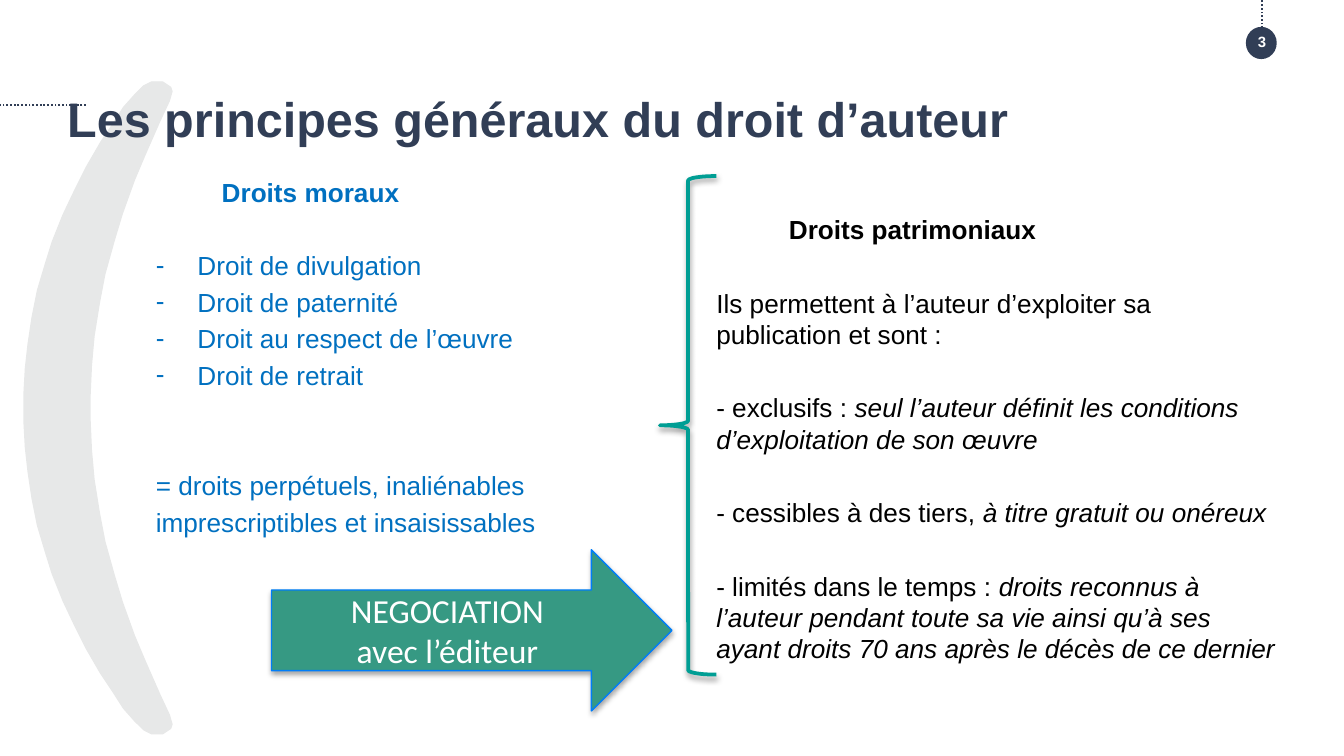
from dataclasses import dataclass

from lxml.etree import SubElement
from pptx import Presentation
from pptx.dml.color import RGBColor
from pptx.enum.dml import MSO_LINE
from pptx.enum.shapes import MSO_CONNECTOR, MSO_SHAPE
from pptx.enum.text import MSO_ANCHOR, PP_ALIGN
from pptx.oxml.ns import qn
from pptx.util import Inches, Pt

COLORS = {
    "navy": "313E56", "gray": "E7E8E8", "blue": "0070C0", "black": "000000",
    "white": "FFFFFF", "green": "369983", "edge": "007DF9", "teal": "009E94",
}
GAP = 2.8  # space before each paragraph, points
ROW = 19.7  # height of one empty row, points


@dataclass
class Span:
    text: str
    bold: bool = False
    italic: bool = False


@dataclass
class Para:
    spans: list[Span]
    rows_before: int = 0
    indent: float = 0
    dash: bool = False


def color(name: str) -> RGBColor:
    return RGBColor.from_string(COLORS[name])


def add_span(para, span: Span, size: float, ink: str, face: str = "Arial") -> None:
    run = para.add_run()
    run.text = span.text
    font = run.font
    font.name, font.size = face, Pt(size)
    font.bold, font.italic = span.bold, span.italic
    font.color.rgb = color(ink)


def add_box(page, left: float, top: float, width: float, height: float,
            anchor=MSO_ANCHOR.TOP):
    box = page.shapes.add_textbox(Inches(left), Inches(top), Inches(width), Inches(height))
    frame = box.text_frame
    frame.word_wrap = True
    frame.vertical_anchor = anchor
    frame.margin_left = frame.margin_right = frame.margin_top = frame.margin_bottom = 0
    return frame


def add_column(page, left: float, top: float, width: float, height: float,
               ink: str, items: list[Para]) -> None:
    frame = add_box(page, left, top, width, height)
    for index, item in enumerate(items):
        para = frame.paragraphs[0] if index == 0 else frame.add_paragraph()
        if index:
            para.space_before = Pt(GAP + item.rows_before * ROW)
        properties = para._p.get_or_add_pPr()
        properties.set("marL", str(Inches(item.indent)))
        if item.dash:
            properties.set("indent", str(-Inches(item.indent)))
            SubElement(properties, qn("a:buFont"), typeface="Arial")
            SubElement(properties, qn("a:buChar"), char="-")
        for span in item.spans:
            add_span(para, span, 14, ink)


def add_dotted_line(page, x1: float, y1: float, x2: float, y2: float) -> None:
    line = page.shapes.add_connector(
        MSO_CONNECTOR.STRAIGHT, Inches(x1), Inches(y1), Inches(x2), Inches(y2))
    line.line.color.rgb = color("navy")
    line.line.width = Pt(1)
    line.line.dash_style = MSO_LINE.ROUND_DOT
    SubElement(line._element.spPr, qn("a:effectLst"))


def add_shadow(shape, opacity: int, distance: float) -> None:
    shape.shadow.inherit = False
    effects = shape._element.spPr.find(qn("a:effectLst"))
    shadow = SubElement(effects, qn("a:outerShdw"), blurRad=str(Pt(3.1)),
                        dist=str(Pt(distance)), dir="5400000", rotWithShape="0")
    ink = SubElement(shadow, qn("a:srgbClr"), val=COLORS["black"])
    SubElement(ink, qn("a:alpha"), val=str(opacity * 1000))


def add_bracket(page) -> None:
    """Large parenthesis: the upper half, mirrored about its middle."""
    upper = [
        (0.67, 2.95), (0.68, 2.72), (0.7, 2.5), (0.74, 2.25), (0.78, 2.04),
        (0.85, 1.79), (0.91, 1.59), (1, 1.34), (1.08, 1.15), (1.19, 0.9),
        (1.26, 0.75), (1.28, 0.68), (1.27, 0.65), (1.21, 0.61), (1.13, 0.61),
        (1.07, 0.64), (1, 0.71), (0.92, 0.8), (0.85, 0.91), (0.75, 1.06),
        (0.64, 1.25), (0.56, 1.41), (0.47, 1.6), (0.39, 1.8), (0.34, 1.96),
        (0.28, 2.16), (0.24, 2.36), (0.21, 2.56), (0.19, 2.74), (0.18, 2.92),
    ]
    lower = [(x, 6.07 - y) for x, y in reversed(upper)]
    start, *rest = [(Inches(x), Inches(y)) for x, y in upper + lower]
    builder = page.shapes.build_freeform(*start)
    builder.add_line_segments(rest, close=True)
    bracket = builder.convert_to_shape()
    bracket.shadow.inherit = False
    bracket.fill.solid()
    bracket.fill.fore_color.rgb = color("gray")
    bracket.line.color.rgb = color("gray")
    bracket.line.width = Pt(0.75)


def main() -> None:
    deck = Presentation()
    deck.slide_width = Inches(10)
    deck.slide_height = deck.slide_width * 9 // 16
    page = deck.slides.add_slide(deck.slide_layouts[6])

    # Background decoration
    add_bracket(page)
    badge = page.shapes.add_shape(
        MSO_SHAPE.OVAL, Inches(9.27), Inches(0.2), Inches(0.23), Inches(0.24))
    badge.shadow.inherit = False
    badge.fill.solid()
    badge.fill.fore_color.rgb = color("navy")
    badge.line.fill.background()
    add_dotted_line(page, 9.39, 0.21, 9.39, 0)
    add_dotted_line(page, 0.64, 0.78, 0, 0.78)

    # Title and page number
    title = add_box(page, 0.5, 0.66, 9, 0.53)
    add_span(title.paragraphs[0],
             Span("Les principes généraux du droit d’auteur", bold=True), 26, "navy")
    number = add_box(page, 9.14, 0.25, 0.5, 0.12, MSO_ANCHOR.MIDDLE).paragraphs[0]
    number.alignment = PP_ALIGN.CENTER
    add_span(number, Span("3", bold=True), 8, "white")

    # Moral rights
    rights = ["Droit de divulgation", "Droit de paternité",
              "Droit au respect de l’œuvre", "Droit de retrait"]
    add_column(page, 1.16, 1.31, 3.7, 2.8, "blue", [
        Para([Span("Droits moraux", bold=True)], indent=0.49),
        *[Para([Span(right)], rows_before=int(index == 0), indent=0.31, dash=True)
          for index, right in enumerate(rights)],
        Para([Span("= droits perpétuels, inaliénables")], rows_before=2),
        Para([Span("imprescriptibles et insaisissables")]),
    ])

    # Economic rights
    terms = [
        ("- exclusifs : ",
         "seul l’auteur définit les conditions d’exploitation de son œuvre"),
        ("- cessibles à des tiers, ", "à titre gratuit ou onéreux"),
        ("- limités dans le temps : ",
         "droits reconnus à l’auteur pendant toute sa vie ainsi qu’à ses "
         "ayant droits 70 ans après le décès de ce dernier"),
    ]
    add_column(page, 5.33, 1.59, 4.17, 3.43, "black", [
        Para([Span("Droits patrimoniaux", bold=True)], indent=0.54),
        Para([Span("Ils permettent à l’auteur d’exploiter sa publication et sont :")],
             rows_before=1),
        *[Para([Span(term), Span(detail, italic=True)], rows_before=1)
          for term, detail in terms],
    ])

    # Negotiation arrow
    arrow = page.shapes.add_shape(
        MSO_SHAPE.RIGHT_ARROW, Inches(2.02), Inches(4.09), Inches(2.98), Inches(1.2))
    arrow.fill.solid()
    arrow.fill.fore_color.rgb = color("green")
    arrow.line.color.rgb = color("edge")
    arrow.line.width = Pt(0.75)
    add_shadow(arrow, 35, 1.8)
    frame = arrow.text_frame
    frame.vertical_anchor = MSO_ANCHOR.MIDDLE
    frame.margin_right = Inches(0.16)
    for para, text in ((frame.paragraphs[0], "NEGOCIATION"),
                       (frame.add_paragraph(), "avec l’éditeur")):
        para.alignment = PP_ALIGN.CENTER
        add_span(para, Span(text), 18, "white", "Calibri")

    # Brace in front of the economic rights
    brace = page.shapes.add_shape(
        MSO_SHAPE.LEFT_BRACE, Inches(4.91), Inches(1.31), Inches(0.42), Inches(3.71))
    brace.adjustments[0] = 0.08
    brace.adjustments[1] = 0.5
    brace.fill.background()
    brace.line.color.rgb = color("teal")
    brace.line.width = Pt(2)
    add_shadow(brace, 38, 1.6)

    deck.save("out.pptx")


if __name__ == "__main__":
    main()
